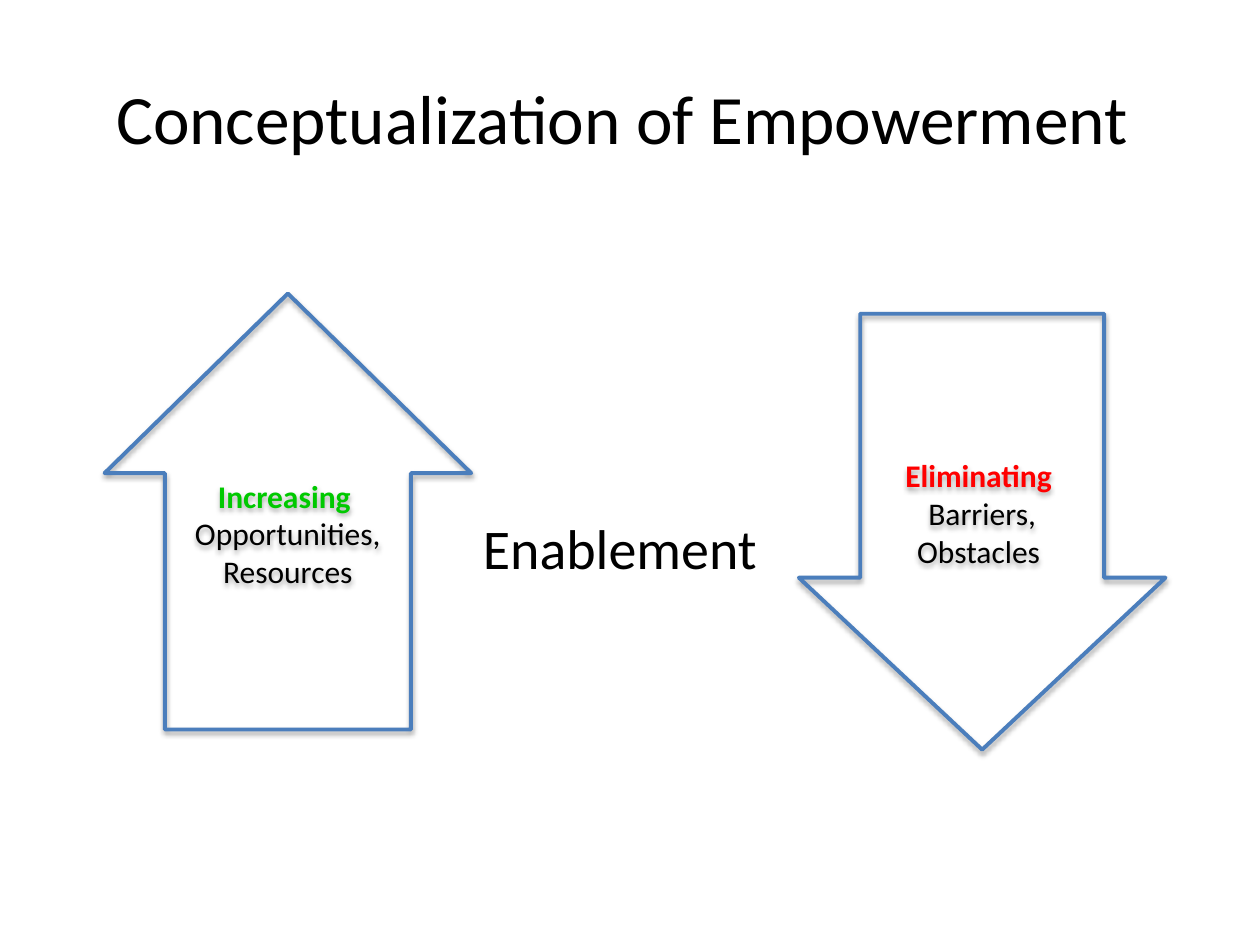
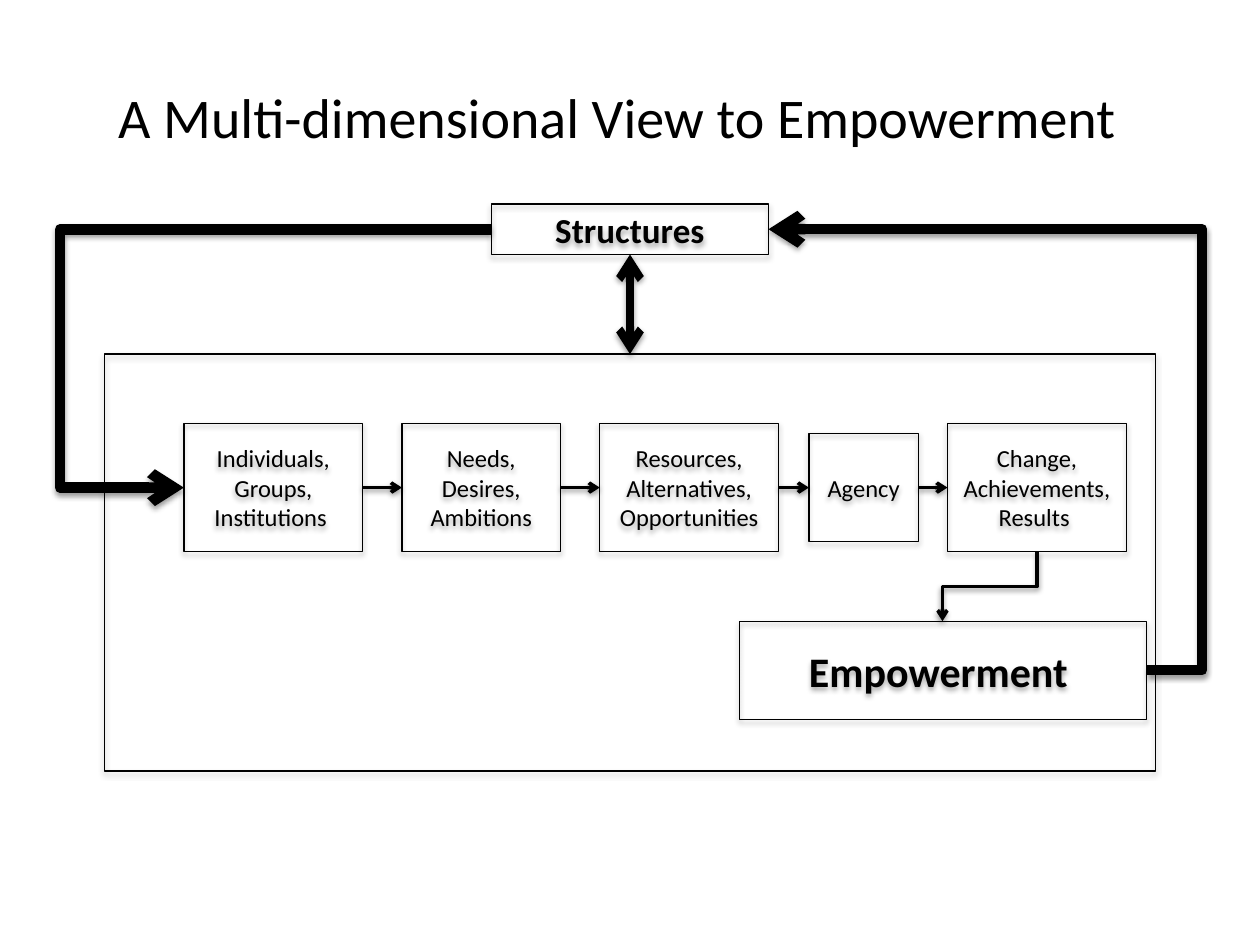
from lxml.etree import SubElement
from pptx import Presentation
from pptx.dml.color import RGBColor
from pptx.enum.shapes import MSO_CONNECTOR, MSO_SHAPE
from pptx.enum.text import MSO_ANCHOR, MSO_AUTO_SIZE, PP_ALIGN
from pptx.oxml.ns import qn
from pptx.util import Inches, Pt

COLORS = {"black": "000000", "blue": "4B7EBC", "green": "00C900", "red": "FF0000"}
FONT = "Calibri"


def write(frame, lines, size, color="black", bold=False):
    """Fill a text frame with one centred paragraph per line.

    A line is a text, or a (text, color, bold) tuple.
    """
    frame.word_wrap = True
    for index, line in enumerate(lines):
        text, line_color, line_bold = (line, color, bold) if isinstance(line, str) else line
        paragraph = frame.paragraphs[0] if index == 0 else frame.add_paragraph()
        paragraph.alignment = PP_ALIGN.CENTER
        run = paragraph.add_run()
        run.text = text
        run.font.name = FONT
        run.font.size = Pt(size)
        run.font.bold = line_bold
        run.font.color.rgb = RGBColor.from_string(COLORS[line_color])


def outline(drawn, color, width, opacity, distance, arrowheads=()):
    """Give a shape or connector its line, arrowheads and soft shadow."""
    drawn.line.color.rgb = RGBColor.from_string(COLORS[color])
    drawn.line.width = Pt(width)
    for end in arrowheads:
        SubElement(drawn.line._get_or_add_ln(), qn(f"a:{end}"), type="arrow")
    effects = SubElement(drawn._element.spPr, qn("a:effectLst"))
    shadow = SubElement(effects, qn("a:outerShdw"), blurRad=str(Pt(3.1)), dist=str(Pt(distance)),
                        dir="5400000", rotWithShape="0")
    shade = SubElement(shadow, qn("a:srgbClr"), val=COLORS["black"])
    SubElement(shade, qn("a:alpha"), val=str(opacity * 1000))


prs = Presentation()
prs.slide_width, prs.slide_height = Inches(10), Inches(7.5)

# Both slides and their titles
slides = []
for heading, size in [("Conceptualization of Empowerment ", 39.6),
                      ("A Multi-dimensional View to Empowerment  ", 32)]:
    slide = prs.slides.add_slide(prs.slide_layouts[5])
    title = slide.shapes.title
    title.left, title.top, title.width, title.height = (
        Inches(v) for v in (0.5, 0.3, 9, 1.25))
    title.text_frame.auto_size = MSO_AUTO_SIZE.NONE
    title.text_frame.vertical_anchor = MSO_ANCHOR.MIDDLE
    write(title.text_frame, [heading], size)
    slides.append(slide)
concept, model = slides

# Slide 1: enablement between the two arrows
enablement = concept.shapes.add_textbox(Inches(3.66), Inches(4.03), Inches(2.52), Inches(0.64))
write(enablement.text_frame, ["Enablement"], 32)

forces = [
    (MSO_SHAPE.UP_ARROW, 0.83, 2.33, (0.671, 0.49), "margin_bottom",
     [("Increasing ", "green", True), "Opportunities,", "Resources"]),
    (MSO_SHAPE.DOWN_ARROW, 6.34, 2.49, (0.665, 0.469), "margin_top",
     [("Eliminating ", "red", True), "Barriers,", "Obstacles "]),
]
for kind, left, top, proportions, padded_side, lines in forces:
    force = concept.shapes.add_shape(kind, Inches(left), Inches(top), Inches(2.91), Inches(3.46))
    for index, proportion in enumerate(proportions):
        force.adjustments[index] = proportion
    force.fill.background()
    outline(force, "blue", 2.25, 35, 1.8)
    force.text_frame.vertical_anchor = MSO_ANCHOR.MIDDLE
    setattr(force.text_frame, padded_side, Inches(0.66))
    write(force.text_frame, lines, 18)

# Slide 2: frame and boxes, with the chain centred on one line
CHAIN_Y = 3.87
boxes = [
    ("frame", 0.83, 2.81, 8.34, 3.31, [], 14),
    ("structures", 3.9, 1.62, 2.2, 0.4, ["Structures"], 20),
    ("empowerment", 5.87, 4.93, 3.23, 0.78, ["Empowerment "], 24),
]
chain = [
    ("people", 1.46, 1.42, 1.02, ["Individuals,", "Groups,", "Institutions "]),
    ("needs", 3.19, 1.26, 1.02, ["Needs,", "Desires,", "Ambitions"]),
    ("resources", 4.76, 1.42, 1.02, ["Resources,", "Alternatives,", "Opportunities"]),
    ("agency", 6.42, 0.87, 0.86, ["Agency"]),
    ("change", 7.52, 1.42, 1.02, ["Change, Achievements,", "Results "]),
]
boxes += [(key, left, CHAIN_Y - height / 2, width, height, lines, 14)
          for key, left, width, height, lines in chain]

parts = {}
for key, left, top, width, height, lines, size in boxes:
    part = model.shapes.add_shape(MSO_SHAPE.RECTANGLE, Inches(left), Inches(top),
                                  Inches(width), Inches(height))
    part.fill.background()
    outline(part, "black", 0.75, 35, 1.8)
    part.text_frame.vertical_anchor = MSO_ANCHOR.MIDDLE
    write(part.text_frame, lines, size, bold=size > 14)
    parts[key] = part

# Straight arrows: along the chain, and between structures and the frame
steps = [step[0] for step in chain]
links = [(start, 3, end, 1, 2, ["tailEnd"]) for start, end in zip(steps, steps[1:])]
links.append(("structures", 2, "frame", 0, 4.5, ["headEnd", "tailEnd"]))
for start, start_side, end, end_side, width, arrowheads in links:
    link = model.shapes.add_connector(MSO_CONNECTOR.STRAIGHT, 0, 0, 0, 0)
    link.begin_connect(parts[start], start_side)
    link.end_connect(parts[end], end_side)
    outline(link, "black", width, 38, 1.6, arrowheads)

# Bent arrows: structures to people, empowerment to structures, change to empowerment
bends = [
    ((3.9, 1.82), (1.46, CHAIN_Y), 1.403, 6, 0),
    ((9.1, 5.32), (6.1, 1.82), -0.147, 6, 0),
    ((7.58, 4.28), (8.13, 5.03), 0.5, 2, 90),
]
for start, end, bend_at, width, turn in bends:
    bend = model.shapes.add_connector(MSO_CONNECTOR.ELBOW, *(Inches(v) for v in start + end))
    properties = bend._element.spPr
    guides = properties.find(qn("a:prstGeom")).get_or_add_avLst()
    SubElement(guides, qn("a:gd"), name="adj1", fmla=f"val {round(bend_at * 100000)}")
    if turn:
        properties.find(qn("a:xfrm")).set("rot", str(turn * 60000))
    outline(bend, "black", width, 38, 1.6, ["tailEnd"])

prs.save("out.pptx")
